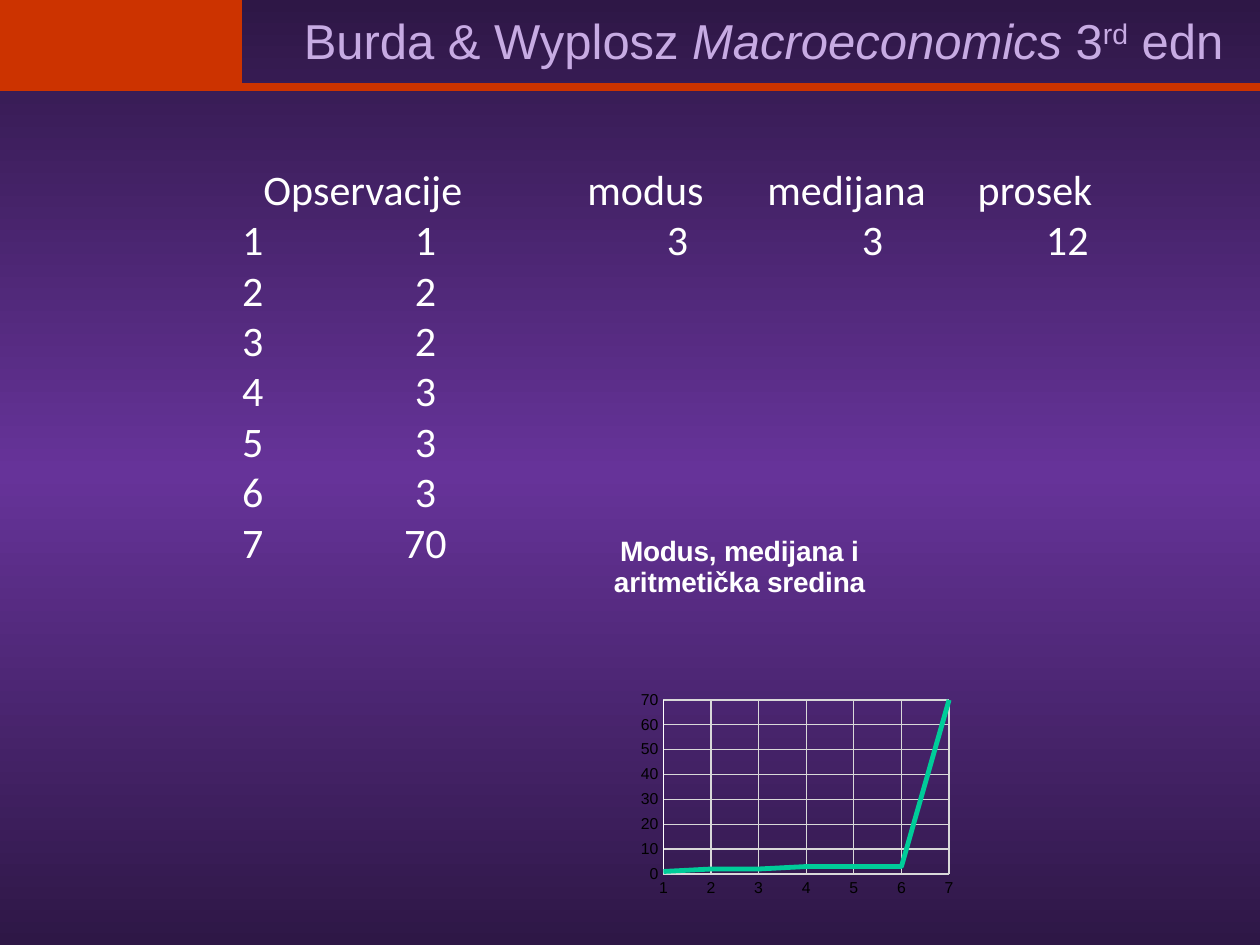
from copy import deepcopy

from lxml.etree import SubElement
from pptx import Presentation
from pptx.chart.data import XyChartData
from pptx.dml.color import RGBColor
from pptx.enum.chart import XL_CHART_TYPE, XL_TICK_MARK
from pptx.enum.shapes import MSO_CONNECTOR, MSO_SHAPE
from pptx.enum.text import MSO_ANCHOR, PP_ALIGN
from pptx.oxml.ns import qn
from pptx.util import Cm, Pt

RED, WHITE, GRID = "CC3300", "FFFFFF", "D9D9D9"
HEADS = ["Opservacije", "modus", "medijana", "prosek"]
VALUES = [1, 2, 2, 3, 3, 3, 70]
STATS = [3, 3, 12]


def rgb(code):
    return RGBColor.from_string(code)


def style(font, color, **attrs):
    font.color.rgb = rgb(color)
    for name, value in attrs.items():
        setattr(font, name, value)


def stroke(line, color, width):
    line.color.rgb = rgb(color)
    line.width = Pt(width)


def paint_back(slide):
    fill = slide.background.fill
    fill.gradient()
    fill.gradient_angle = 270
    stops = slide.element.find(".//" + qn("a:gsLst"))
    stops.insert(1, deepcopy(stops[0]))
    for node, place in zip(stops, (0, 50000, 100000)):
        node.set("pos", str(place))
    for stop, code in zip(fill.gradient_stops, ("2E1746", "663399", "2E1746")):
        stop.color.rgb = rgb(code)


def add_rule(slide):
    rule = slide.shapes.add_connector(
        MSO_CONNECTOR.STRAIGHT, 0, Cm(1.75), Cm(25.4), Cm(1.75))
    stroke(rule.line, RED, 4.5)
    SubElement(rule._element.spPr, qn("a:effectLst"))


def set_title(slide):
    title = slide.shapes.title
    title.left, title.top, title.width, title.height = (
        Cm(5.87), Cm(0.08), Cm(19.48), Cm(1.45))
    frame = title.text_frame
    frame.vertical_anchor = MSO_ANCHOR.MIDDLE
    para = frame.paragraphs[0]
    para.alignment = PP_ALIGN.LEFT
    para.space_before = Pt(5)
    for text, italic, raised in [
            ("Burda & Wyplosz ", False, False), ("Macroeconomics", True, False),
            (" 3", False, False), ("rd", False, True), (" edn", False, False)]:
        run = para.add_run()
        run.text = text
        style(run.font, "C7ABE3", name="Arial", size=Pt(28), italic=italic)
        if raised:
            run.font._element.set("baseline", "30000")


def add_block(slide):
    box = slide.shapes.add_shape(MSO_SHAPE.RECTANGLE, 0, 0, Cm(4.88), Cm(1.7))
    box.shadow.inherit = False
    box.fill.solid()
    box.fill.fore_color.rgb = rgb(RED)
    box.line.fill.background()


def add_grid(slide):
    rows = [[""] + HEADS, [1, VALUES[0]] + STATS]
    rows += [[n, value, "", "", ""] for n, value in enumerate(VALUES[1:], 2)]
    table = slide.shapes.add_table(
        len(rows), 5, Cm(1.09), Cm(3.33), Cm(22.23), Cm(8.13)).table
    table.first_row = table.horz_banding = False
    for col, width in zip(table.columns, (4.22, 6.53, 3.63, 4.24, 3.61)):
        col.width = Cm(width)
    # A plain style without borders
    table._tbl.tblPr.find(qn("a:tableStyleId")).text = (
        "{2D5ABB26-0587-4C30-8999-92F81FD0307C}")
    for r, row in enumerate(rows):
        for c, value in enumerate(row):
            cell = table.cell(r, c)
            cell.fill.background()
            cell.vertical_anchor = MSO_ANCHOR.BOTTOM
            for side in ("left", "top", "right", "bottom"):
                setattr(cell, "margin_" + side, 0)
            para = cell.text_frame.paragraphs[0]
            para.text = str(value)
            para.line_spacing = 0.98
            if r:
                para.alignment = PP_ALIGN.CENTER if c else PP_ALIGN.RIGHT
            for run in para.runs:
                style(run.font, WHITE, name="Calibri", size=Pt(24))


def set_axis(axis, color, **limits):
    for name, value in limits.items():
        setattr(axis, name, value)
    axis.major_tick_mark = axis.minor_tick_mark = XL_TICK_MARK.NONE
    axis.has_major_gridlines = True
    stroke(axis.major_gridlines.format.line, GRID, 0.75)
    stroke(axis.format.line, color, 0.75)
    style(axis.tick_labels.font, "000000", name="Arial", size=Pt(9))


def set_plot(chart):
    area = chart._chartSpace.chart.plotArea
    old = area.find(qn("c:layout"))
    if old is not None:
        area.remove(old)
    layout = area.makeelement(qn("c:layout"))
    area.insert(0, layout)
    manual = SubElement(layout, qn("c:manualLayout"))
    for tag, value in [("layoutTarget", "inner"), ("xMode", "edge"), ("yMode", "edge"),
                       ("x", 0.34), ("y", 0.47), ("w", 0.6), ("h", 0.44)]:
        SubElement(manual, qn("c:" + tag)).set("val", str(value))


def add_plot(slide):
    data = XyChartData()
    series = data.add_series("Series 1")
    for x, y in enumerate(VALUES, 1):
        series.add_data_point(x, y)
    chart = slide.shapes.add_chart(
        XL_CHART_TYPE.XY_SCATTER_LINES_NO_MARKERS,
        Cm(10.11), Cm(10.36), Cm(9.6), Cm(7.98), data).chart
    chart.has_legend = False
    style(chart.font, "000000", name="Arial", size=Pt(10))
    frame = chart.chart_title.text_frame
    frame.text = "Modus, medijana i aritmetička sredina"
    style(frame.paragraphs[0].runs[0].font, WHITE, name="Arial", size=Pt(16), bold=True)
    set_axis(chart.category_axis, GRID, minimum_scale=1, maximum_scale=7, major_unit=1)
    set_axis(chart.value_axis, WHITE, minimum_scale=0, maximum_scale=70, major_unit=10)
    set_plot(chart)
    plot = chart.plots[0]
    plot.vary_by_categories = False
    curve = plot.series[0]
    curve.smooth = False
    stroke(curve.format.line, "00CC99", 2.75)


def main():
    deck = Presentation()
    deck.slide_width, deck.slide_height = Cm(25.4), Cm(19.05)
    slide = deck.slides.add_slide(deck.slide_layouts[5])
    paint_back(slide)
    # Header band
    add_rule(slide)
    set_title(slide)
    add_block(slide)
    # Observations and their curve
    add_grid(slide)
    add_plot(slide)
    deck.save("out.pptx")


if __name__ == "__main__":
    main()
